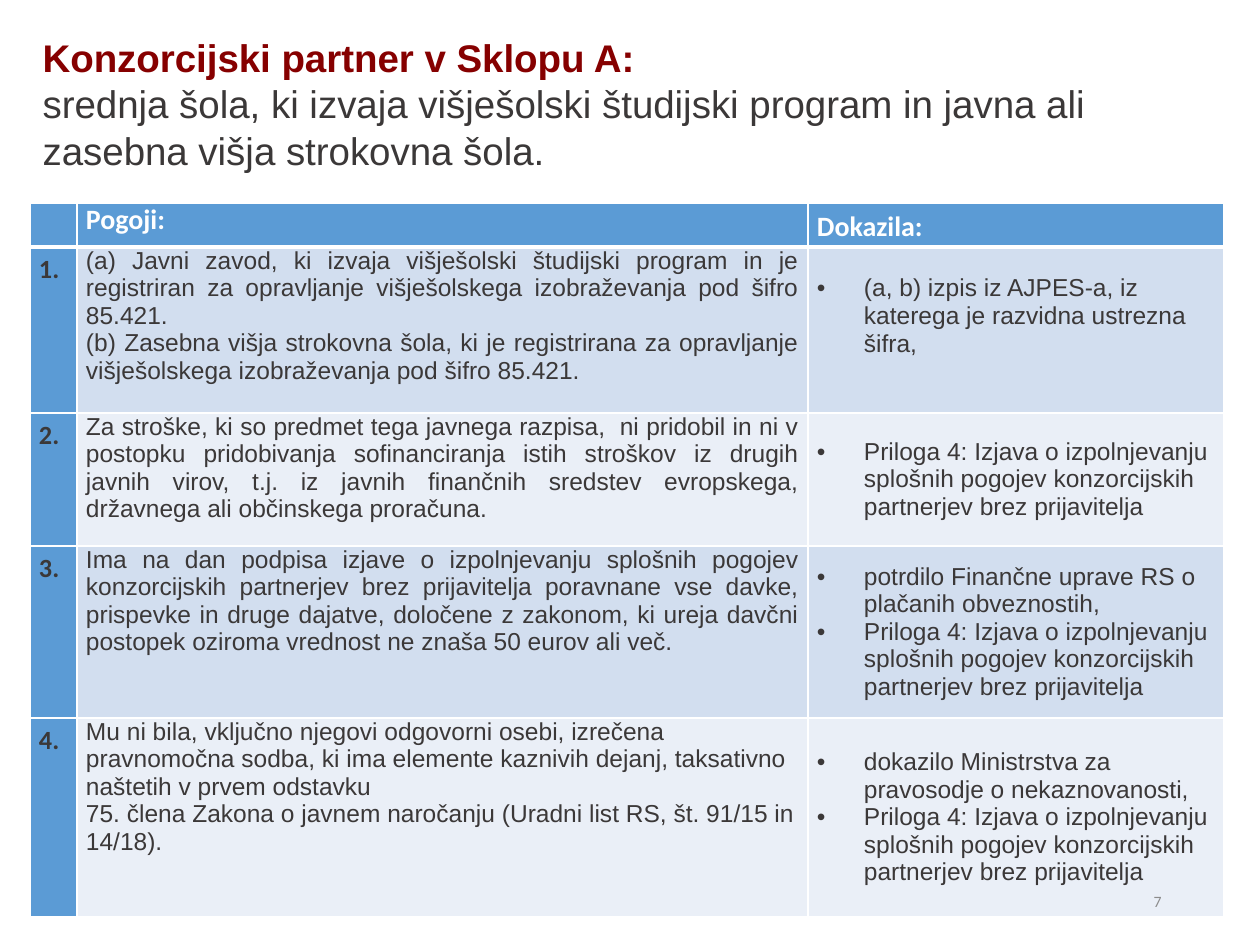
from pptx import Presentation
from pptx.dml.color import RGBColor
from pptx.enum.text import MSO_ANCHOR, MSO_AUTO_SIZE, PP_ALIGN
from pptx.oxml.ns import qn
from pptx.util import Emu, Pt
from lxml.etree import SubElement

COLORS = {"red": "860000", "dark": "3B3838", "gray": "8C8C8C", "white": "FFFFFF",
          "blue": "5B9BD5", "band": "D2DEEF", "light": "EAEFF7"}
FORMATS = {
    "title": {"size": 22, "name": "Arial", "color": "red", "bold": True},
    "subtitle": {"size": 22, "name": "Arial", "color": "dark", "bold": False},
    "header": {"size": 16, "name": "Calibri", "color": "white", "bold": True},
    "number": {"size": 15, "name": "Calibri", "color": "dark", "bold": True},
    "body": {"size": 14, "name": "Arial", "color": "dark", "bold": False},
    "page": {"size": 9, "name": "Calibri", "color": "gray", "bold": False},
}
TITLE = [
    ("Konzorcijski partner v Sklopu A:", "title"),
    ("srednja šola, ki izvaja višješolski študijski program in javna ali "
     "zasebna višja strokovna šola.", "subtitle"),
]
HEADERS = ["", "Pogoji:", "Dokazila:"]
STATEMENT = ("Priloga 4: Izjava o izpolnjevanju splošnih pogojev "
             "konzorcijskih partnerjev brez prijavitelja")
CONDITIONS = [
    {"terms": ["(a) Javni zavod, ki izvaja višješolski študijski program in je registriran za "
               "opravljanje višješolskega izobraževanja pod šifro 85.421.",
               "(b) Zasebna višja strokovna šola, ki je registrirana za opravljanje "
               "višješolskega izobraževanja pod šifro 85.421."],
     "proofs": ["(a, b) izpis iz AJPES-a, iz katerega je razvidna ustrezna šifra,"],
     "align": PP_ALIGN.JUSTIFY, "below": 28},
    {"terms": ["Za stroške, ki so predmet tega javnega razpisa,  ni pridobil in ni v postopku "
               "pridobivanja sofinanciranja istih stroškov iz drugih javnih virov, t.j. iz "
               "javnih finančnih sredstev evropskega, državnega ali občinskega proračuna."],
     "proofs": [STATEMENT], "align": PP_ALIGN.JUSTIFY, "below": 0},
    {"terms": ["Ima na dan podpisa izjave o izpolnjevanju splošnih pogojev konzorcijskih "
               "partnerjev brez prijavitelja poravnane vse davke, prispevke in druge dajatve, "
               "določene z zakonom, ki ureja davčni postopek oziroma vrednost ne znaša "
               "50 eurov ali več."],
     "proofs": ["potrdilo Finančne uprave RS o plačanih obveznostih,", STATEMENT],
     "align": PP_ALIGN.JUSTIFY, "below": 0},
    {"terms": ["Mu ni bila, vključno njegovi odgovorni osebi, izrečena pravnomočna sodba, ki "
               "ima elemente kaznivih dejanj, taksativno naštetih v prvem odstavku\v"
               "75. člena Zakona o javnem naročanju (Uradni list RS, št. 91/15 in 14/18)."],
     "proofs": ["dokazilo Ministrstva za pravosodje o nekaznovanosti,", STATEMENT],
     "align": PP_ALIGN.LEFT, "below": 0},
]
PAGE_NUMBER = "7"

SLIDE = (1260, 945)
TITLE_AREA = (30, 28, 1203, 152)
TABLE_ORIGIN = (30, 203)
COLUMNS = [47, 731, 416]
ROWS = [44, 166, 133, 172, 199]
PAGE_AREA = (890, 876, 284, 50)
CELL_INSET = 9
BULLET_INDENT = 47


def px(value):
    return Emu(round(value * 914400 / 126))


def place(shape, area):
    for name, value in zip(("left", "top", "width", "height"), area):
        setattr(shape, name, px(value))


def write(frame, items, align=PP_ALIGN.LEFT, spacing=1.0, bullet=False):
    for index, (text, style) in enumerate(items):
        para = frame.paragraphs[0] if index == 0 else frame.add_paragraph()
        para.text = text
        para.alignment = align
        para.line_spacing = spacing
        if bullet:
            props = para._p.get_or_add_pPr()
            props.set("marL", str(px(BULLET_INDENT)))
            props.set("indent", str(-px(BULLET_INDENT)))
            SubElement(props, qn("a:buFont")).set("typeface", "Arial")
            SubElement(props, qn("a:buChar")).set("char", "•")
        look = FORMATS[style]
        for span in para.runs:
            for name, value in (("size", Pt(look["size"])), ("name", look["name"]),
                                ("bold", look["bold"])):
                setattr(span.font, name, value)
            span.font.color.rgb = RGBColor.from_string(COLORS[look["color"]])


def finish_cell(cell, row, fill, below=0):
    for name, value in (("left", CELL_INSET), ("right", CELL_INSET),
                        ("top", 0), ("bottom", below)):
        setattr(cell, "margin_" + name, px(value))
    props = cell._tc.get_or_add_tcPr()
    for side in "LRTB":
        thick = (row, side) in ((0, "B"), (1, "T"))
        line = SubElement(props, qn("a:ln" + side), w=str(Pt(3 if thick else 1)))
        paint = SubElement(line, qn("a:solidFill"))
        SubElement(paint, qn("a:srgbClr")).set("val", COLORS["white"])
    cell.fill.solid()
    cell.fill.fore_color.rgb = RGBColor.from_string(COLORS[fill])


def add_title(page):
    title = page.shapes.title
    place(title, TITLE_AREA)
    frame = title.text_frame
    frame.word_wrap = True
    frame.auto_size = MSO_AUTO_SIZE.SHAPE_TO_FIT_TEXT
    frame.vertical_anchor = MSO_ANCHOR.TOP
    write(frame, TITLE)


def add_conditions(page):
    area = (*TABLE_ORIGIN, sum(COLUMNS), sum(ROWS))
    table = page.shapes.add_table(len(ROWS), len(COLUMNS), *map(px, area)).table
    table.horz_banding = False
    for column, width in zip(table.columns, COLUMNS):
        column.width = px(width)
    for row, height in zip(table.rows, ROWS):
        row.height = px(height)
    for index, text in enumerate(HEADERS):
        cell = table.cell(0, index)
        if text:
            write(cell.text_frame, [(text, "header")], spacing=1.2 if index == 2 else 1.0)
        finish_cell(cell, 0, "blue")
    for row, condition in enumerate(CONDITIONS, 1):
        number, terms, proofs = (table.cell(row, index) for index in range(3))
        fill = "band" if row % 2 else "light"
        write(number.text_frame, [(f"{row}.", "number")], PP_ALIGN.JUSTIFY, 1.2)
        write(terms.text_frame, [(text, "body") for text in condition["terms"]],
              condition["align"])
        write(proofs.text_frame, [(text, "body") for text in condition["proofs"]], bullet=True)
        proofs.vertical_anchor = MSO_ANCHOR.MIDDLE
        finish_cell(number, row, "blue")
        finish_cell(terms, row, fill)
        finish_cell(proofs, row, fill, condition["below"])


def add_page_number(page):
    frame = page.shapes.add_textbox(*map(px, PAGE_AREA)).text_frame
    frame.word_wrap = True
    frame.vertical_anchor = MSO_ANCHOR.MIDDLE
    write(frame, [(PAGE_NUMBER, "page")], PP_ALIGN.RIGHT)


def main():
    deck = Presentation()
    deck.slide_width, deck.slide_height = map(px, SLIDE)
    page = deck.slides.add_slide(deck.slide_layouts[5])
    add_title(page)
    add_conditions(page)
    add_page_number(page)
    deck.save("out.pptx")


if __name__ == "__main__":
    main()
